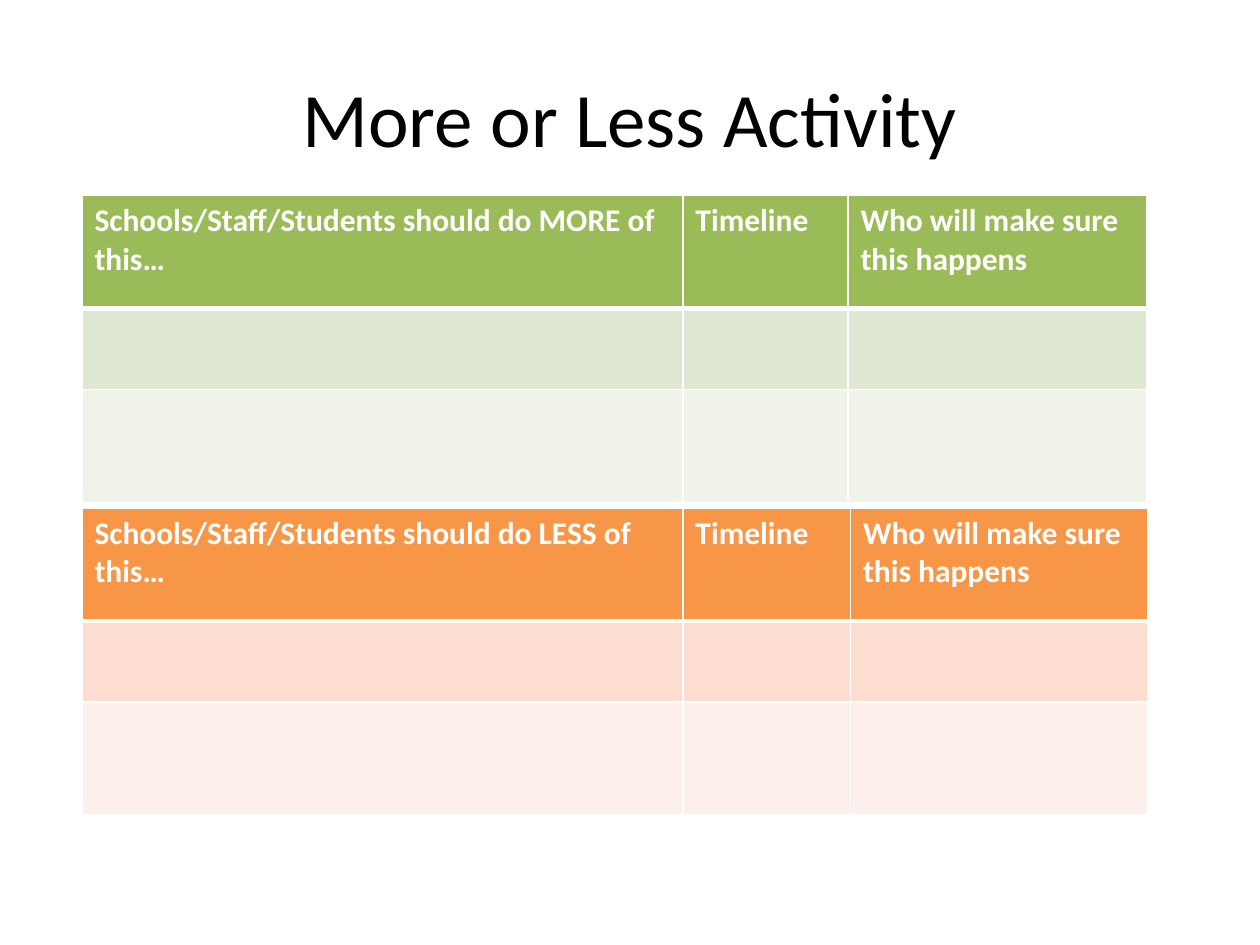
from lxml.etree import SubElement
from pptx import Presentation
from pptx.dml.color import RGBColor
from pptx.enum.text import MSO_ANCHOR, PP_ALIGN
from pptx.oxml.ns import qn
from pptx.util import Inches, Pt

FONT = "Calibri"
BLACK = RGBColor(0x00, 0x00, 0x00)
WHITE = RGBColor(0xFF, 0xFF, 0xFF)
GREENS = [RGBColor(0x9B, 0xBB, 0x59), RGBColor(0xDE, 0xE7, 0xD1), RGBColor(0xEF, 0xF3, 0xEA)]
ORANGES = [RGBColor(0xF7, 0x96, 0x46), RGBColor(0xFC, 0xDD, 0xCF), RGBColor(0xFD, 0xEF, 0xE9)]
ROW_HEIGHTS = [0.9, 0.64, 0.9]


def style_font(paragraph, size, color, bold=False):
    for run in paragraph.runs:
        run.font.name = FONT
        run.font.size = Pt(size)
        run.font.bold = bold
        run.font.color.rgb = color


def set_borders(cell, top, bottom):
    """Draw white cell borders; top and bottom widths are in points."""
    properties = cell._tc.get_or_add_tcPr()
    for side, width in (("L", 1), ("R", 1), ("T", top), ("B", bottom)):
        line = SubElement(properties, qn(f"a:ln{side}"), w=str(Pt(width)))
        fill = SubElement(line, qn("a:solidFill"))
        SubElement(fill, qn("a:srgbClr"), val=str(WHITE))


def add_title(slide, left, top, width, height, wording):
    frame = slide.shapes.add_textbox(left, top, width, height).text_frame
    frame.word_wrap = True
    frame.vertical_anchor = MSO_ANCHOR.MIDDLE
    frame.text = wording
    heading = frame.paragraphs[0]
    heading.alignment = PP_ALIGN.CENTER
    style_font(heading, 44, BLACK)


def add_action_table(slide, left, top, width, height, amount, column_widths, row_colors):
    """Add a planning table with a header row and two empty rows."""
    headers = [f"Schools/Staff/Students should do {amount} of this…",
               "Timeline", "Who will make sure this happens"]
    table = slide.shapes.add_table(len(ROW_HEIGHTS), len(headers),
                                   left, top, width, height).table
    for column, column_width in zip(table.columns, column_widths):
        column.width = Inches(column_width)
    for index, (row, row_height) in enumerate(zip(table.rows, ROW_HEIGHTS)):
        row.height = Inches(row_height)
        for cell in row.cells:
            set_borders(cell, top=3 if index == 1 else 1, bottom=3 if index == 0 else 1)
            cell.fill.solid()
            cell.fill.fore_color.rgb = row_colors[index]
    for cell, header in zip(table.rows[0].cells, headers):
        cell.text_frame.text = header
        style_font(cell.text_frame.paragraphs[0], 18, WHITE, bold=True)


def main():
    prs = Presentation()
    prs.slide_width, prs.slide_height = Inches(10), Inches(7.5)
    slide = prs.slides.add_slide(prs.slide_layouts[6])
    add_title(slide, Inches(0.5), Inches(0.3), Inches(9), Inches(1.25),
              "More or Less Activity")
    for top, amount, column_widths, row_colors in (
            (1.55, "MORE", [4.77, 1.31, 2.37], GREENS),
            (4.03, "LESS", [4.77, 1.33, 2.36], ORANGES)):
        add_action_table(slide, Inches(0.65), Inches(top), Inches(8.46), Inches(2.45),
                         amount, column_widths, row_colors)
    prs.save("out.pptx")


if __name__ == "__main__":
    main()
